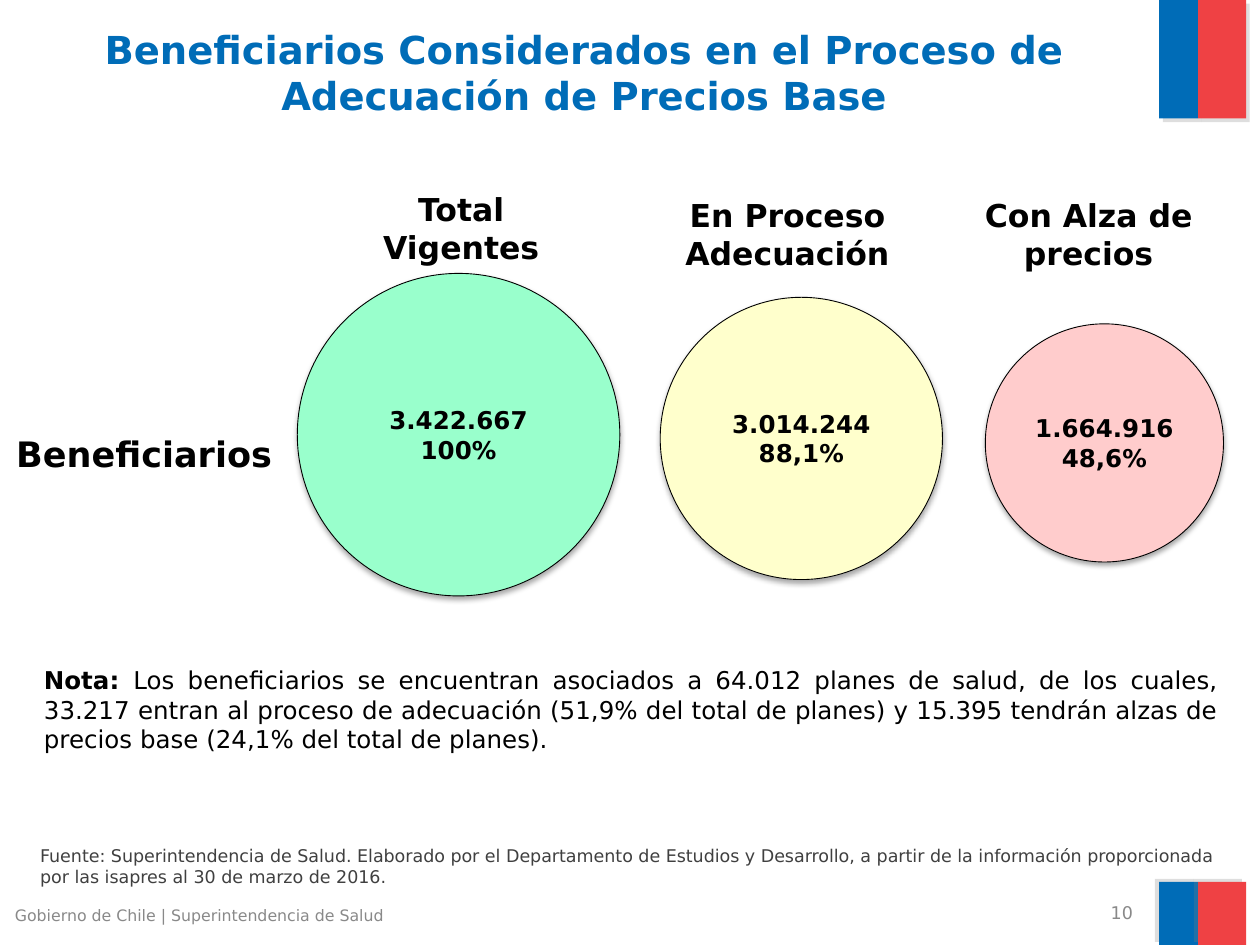
from lxml import etree
from pptx import Presentation
from pptx.dml.color import RGBColor
from pptx.enum import shapes, text
from pptx.oxml.ns import qn
from pptx.util import Inches, Pt

FONT = "DejaVu Sans"
BLACK = RGBColor(0x00, 0x00, 0x00)
DARK_GRAY = RGBColor(0x40, 0x40, 0x40)
GRAY = RGBColor(0x89, 0x89, 0x89)
SHADOW_GRAY = RGBColor(0x80, 0x80, 0x80)
BLUE = RGBColor(0x00, 0x6C, 0xB7)
RED = RGBColor(0xEF, 0x41, 0x44)
GREEN = RGBColor(0x99, 0xFF, 0xCC)
PINK = RGBColor(0xFF, 0xCC, 0xCC)
YELLOW = RGBColor(0xFF, 0xFF, 0xCC)

LEFT, CENTER = text.PP_ALIGN.LEFT, text.PP_ALIGN.CENTER
RIGHT, JUSTIFY = text.PP_ALIGN.RIGHT, text.PP_ALIGN.JUSTIFY
TOP, MIDDLE = text.MSO_ANCHOR.TOP, text.MSO_ANCHOR.MIDDLE


def add_shadow(sp, color, opacity, blur, dist, angle):
    sp.shadow.inherit = False
    effects = sp._element.spPr.find(qn("a:effectLst"))
    shadow = etree.SubElement(effects, qn("a:outerShdw"), {
        "blurRad": str(Pt(blur)), "dist": str(Pt(dist)),
        "dir": str(angle * 60000), "algn": "ctr", "rotWithShape": "0"})
    clr = etree.SubElement(shadow, qn("a:srgbClr"), val=str(color))
    etree.SubElement(clr, qn("a:alpha"), val=str(opacity * 1000))


def add_run(p, content, size, color=BLACK, bold=False):
    r = p.add_run()
    r.text = content
    for name, value in {"name": FONT, "size": Pt(size), "bold": bold}.items():
        setattr(r.font, name, value)
    r.font.color.rgb = color


def add_text(s, box, runs, size, color=BLACK, align=LEFT, anchor=TOP):
    tf = s.shapes.add_textbox(*map(Inches, box)).text_frame
    for name, value in {"word_wrap": True, "vertical_anchor": anchor}.items():
        setattr(tf, name, value)
    p = tf.paragraphs[0]
    p.alignment = align
    for content, bold in runs:
        add_run(p, content, size, color, bold)


def add_filled(s, kind, box, fill):
    sp = s.shapes.add_shape(kind, *map(Inches, box))
    sp.fill.solid()
    sp.fill.fore_color.rgb = fill
    return sp


def add_flag(s, top, height, angle):
    for left, width, color in ((9.2, 0.31, BLUE), (9.51, 0.38, RED)):
        sp = add_filled(s, shapes.MSO_SHAPE.RECTANGLE,
                        (left, top, width, height), color)
        sp.line.fill.background()
        add_shadow(sp, SHADOW_GRAY, 25, 0, 3, angle)


def add_circle(s, left, top, size, fill, lines):
    sp = add_filled(s, shapes.MSO_SHAPE.OVAL, (left, top, size, size), fill)
    sp.line.color.rgb = BLACK
    sp.line.width = Pt(0.5)
    add_shadow(sp, BLACK, 35, 3.1, 1.8, 90)
    tf = sp.text_frame
    tf.vertical_anchor = MIDDLE
    for i, line in enumerate(lines):
        p = tf.add_paragraph() if i else tf.paragraphs[0]
        p.alignment = CENTER
        add_run(p, line, 14, bold=True)


def main():
    prs = Presentation()
    prs.slide_width, prs.slide_height = Inches(10), Inches(7.5)
    s = prs.slides.add_slide(prs.slide_layouts[6])

    add_flag(s, 0, 0.94, 45)
    add_flag(s, 7, 0.5, 215)

    add_text(s, (0.02, 7.14, 3.17, 0.27),
             [("Gobierno de Chile | Superintendencia de Salud", False)], 9, GRAY)
    add_text(s, (0.02, 0.16, 9.23, 0.96),
             [("Beneficiarios Considerados en el Proceso de Adecuación de "
               "Precios Base", True)], 22, BLUE, CENTER)
    add_text(s, (0.22, 6.66, 9.55, 0.44),
             [("Fuente: Superintendencia de Salud. Elaborado por el Departamento "
               "de Estudios y Desarrollo, a partir de la información "
               "proporcionada por las isapres al 30 de marzo de 2016.", False)],
             10, DARK_GRAY)
    add_text(s, (6.76, 7.14, 2.33, 0.21), [("10", False)], 10, GRAY, RIGHT, MIDDLE)

    add_text(s, (0.03, 3.38, 2.45, 0.44), [("Beneficiarios", True)], 20)
    for left, top, width, heading in (
            (2.87, 1.46, 1.58, "Total Vigentes"),
            (5.3, 1.51, 1.9, "En Proceso Adecuación"),
            (7.48, 1.51, 2.32, "Con Alza de precios")):
        add_text(s, (left, top, width, 0.71), [(heading, True)], 18, align=CENTER)

    add_text(s, (0.25, 5.23, 9.52, 0.81),
             [("Nota: ", True),
              ("Los beneficiarios se encuentran asociados a 64.012 planes de "
               "salud, de los cuales, 33.217 entran al proceso de adecuación "
               "(51,9% del total de planes) y 15.395 tendrán alzas de precios "
               "base (24,1% del total de planes).", False)], 14, align=JUSTIFY)

    add_circle(s, 2.36, 2.17, 2.56, GREEN, ("3.422.667", "100%"))
    add_circle(s, 7.82, 2.57, 1.89, PINK, ("1.664.916", "48,6%"))
    add_circle(s, 5.24, 2.36, 2.24, YELLOW, ("3.014.244", "88,1%"))

    prs.save("out.pptx")


if __name__ == "__main__":
    main()
